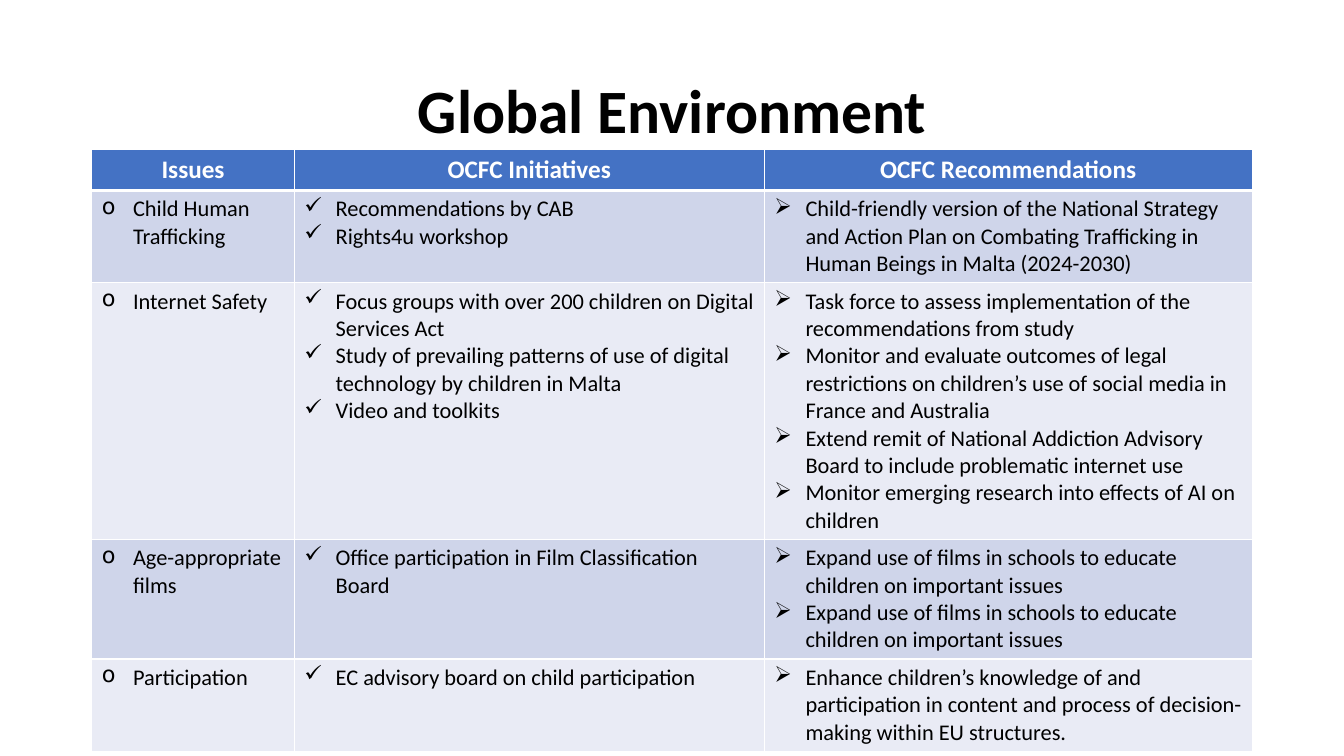
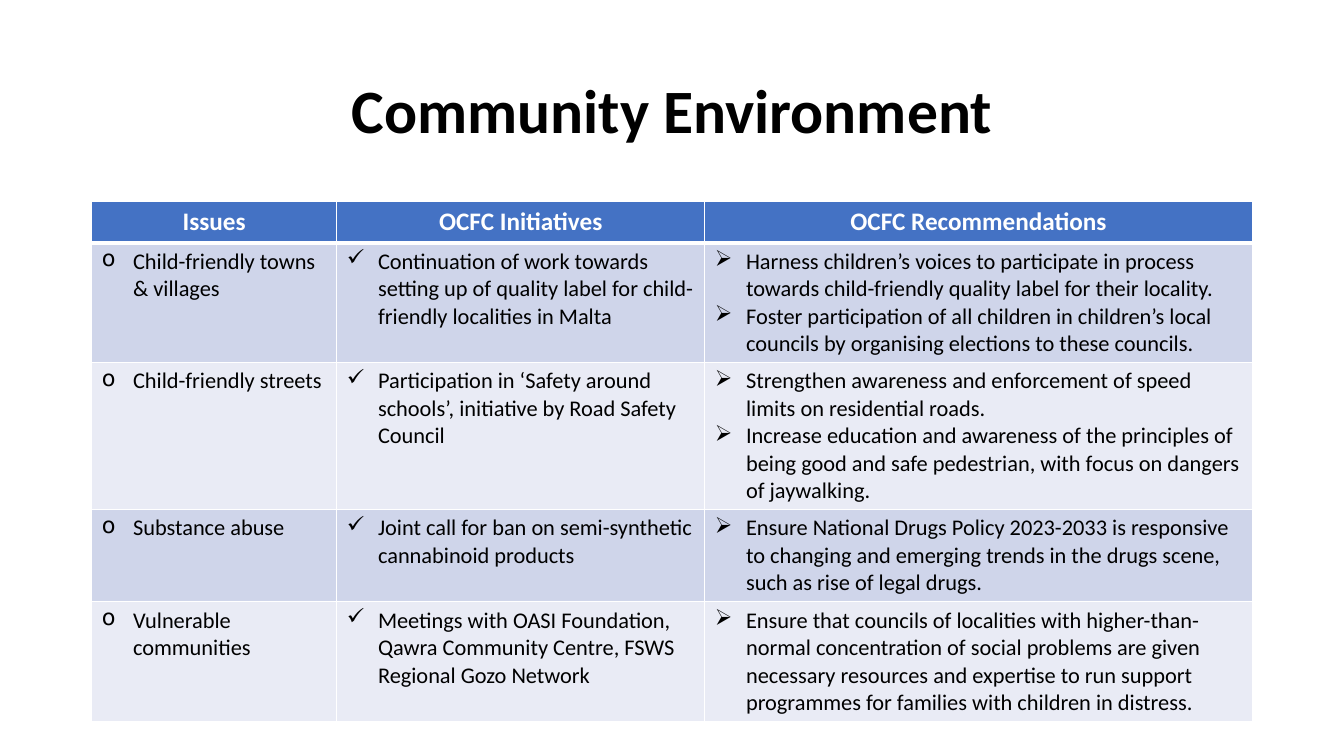
from pptx import Presentation
from pptx.dml.color import RGBColor
from pptx.enum.text import MSO_ANCHOR as Anchor, MSO_AUTO_SIZE as Fit, PP_ALIGN as Align
from pptx.oxml.ns import qn
from pptx.util import Inches, Pt
from lxml.etree import SubElement

FONT = "Calibri"
BLACK, WHITE, BLUE = "000000", "FFFFFF", "4472C4"
BANDS = ("CFD5EA", "E9EBF5")
HEADS = ("Issues", "OCFC Initiatives", "OCFC Recommendations")
MARKS = ("o", "✓", "➢")
INDENT = Inches(0.31)
ROW = 0.41
TITLE_BOX = (0.92, 0.4, 11.5, 1.45)

GLOBAL = [
    (["Child Human Trafficking"],
     ["Recommendations by CAB", "Rights4u workshop"],
     ["Child-friendly version of the National Strategy and Action Plan on "
      "Combating Trafficking in Human Beings in Malta (2024-2030)"]),
    (["Internet Safety"],
     ["Focus groups with over 200 children on Digital Services Act",
      "Study of prevailing patterns of use of digital technology by children in Malta",
      "Video and toolkits"],
     ["Task force to assess implementation of the recommendations from study",
      "Monitor and evaluate outcomes of legal restrictions on children’s use "
      "of social media in France and Australia",
      "Extend remit of National Addiction Advisory Board to include "
      "problematic internet use",
      "Monitor emerging research into effects of AI on children"]),
    (["Age-appropriate films"],
     ["Office participation in Film Classification Board"],
     ["Expand use of films in schools to educate children on important issues"] * 2),
    (["Participation"],
     ["EC advisory board on child participation"],
     ["Enhance children’s knowledge of and participation in content and "
      "process of decision-making within EU structures."]),
]

COMMUNITY = [
    (["Child-friendly towns & villages"],
     ["Continuation of work towards setting up of quality label for "
      "child-friendly localities in Malta"],
     ["Harness children’s voices to participate in process towards "
      "child-friendly quality label for their locality.",
      "Foster participation of all children in children’s local councils by "
      "organising elections to these councils."]),
    (["Child-friendly streets"],
     ["Participation in ‘Safety around schools’, initiative by Road Safety Council"],
     ["Strengthen awareness and enforcement of speed limits on residential roads.",
      "Increase education and awareness of the principles of being good and "
      "safe pedestrian, with focus on dangers of jaywalking."]),
    (["Substance abuse"],
     ["Joint call for ban on semi-synthetic cannabinoid products"],
     ["Ensure National Drugs Policy 2023-2033 is responsive to changing and "
      "emerging trends in the drugs scene, such as rise of legal drugs."]),
    (["Vulnerable communities"],
     ["Meetings with OASI Foundation, Qawra Community Centre, FSWS Regional Gozo Network"],
     ["Ensure that councils of localities with higher-than-normal concentration "
      "of social problems are given necessary resources and expertise to run "
      "support programmes for families with children in distress."]),
]


def rgb(code):
    return RGBColor.from_string(code)


def write(frame, lines, size=16, color=BLACK, bold=False, align=Align.LEFT,
          mark=None, spacing=None):
    for i, line in enumerate(lines):
        para = frame.add_paragraph() if i else frame.paragraphs[0]
        para.text = line
        para.alignment = align
        if spacing:
            para.line_spacing = spacing
        if mark:
            props = para._p.get_or_add_pPr()
            props.set("marL", str(INDENT))
            props.set("indent", str(-INDENT))
            SubElement(props, qn("a:buChar"), char=mark)
        font = para.font
        font.name, font.size, font.bold = FONT, Pt(size), bold
        font.color.rgb = rgb(color)


def edge(cell, top, bottom):
    """Draw white cell borders, with top and bottom widths in points."""
    props = cell._tc.get_or_add_tcPr()
    for side, width in (("L", 1), ("R", 1), ("T", top), ("B", bottom)):
        line = SubElement(props, qn("a:ln" + side), w=str(Pt(width)))
        fill = SubElement(line, qn("a:solidFill"))
        SubElement(fill, qn("a:srgbClr"), val=WHITE)


def paint(cell, color):
    cell.fill.solid()
    cell.fill.fore_color.rgb = rgb(color)


def add_title(slide, text, box):
    title = slide.shapes.title
    title.left, title.top, title.width, title.height = map(Inches, box)
    frame = title.text_frame
    frame.vertical_anchor = Anchor.MIDDLE
    frame.auto_size = Fit.NONE
    write(frame, [text], size=44, bold=True, align=Align.CENTER, spacing=0.9)


def add_grid(slide, rows, left, top, widths):
    count = len(rows) + 1
    grid = slide.shapes.add_table(count, len(widths), Inches(left), Inches(top),
                                  Inches(sum(widths)), Inches(ROW * count)).table
    for col, width in zip(grid.columns, widths):
        col.width = Inches(width)
    for c, head in enumerate(HEADS):
        cell = grid.cell(0, c)
        edge(cell, 1, 3)
        paint(cell, BLUE)
        write(cell.text_frame, [head], size=18, color=WHITE, bold=True,
              align=Align.CENTER)
    for r, row in enumerate(rows, 1):
        for c, lines in enumerate(row):
            cell = grid.cell(r, c)
            edge(cell, 3 if r == 1 else 1, 1)
            paint(cell, BANDS[(r - 1) % 2])
            write(cell.text_frame, lines, mark=MARKS[c])


def add_topic(deck, title, rows, top, widths):
    slide = deck.slides.add_slide(deck.slide_layouts.get_by_name("Title Only"))
    add_title(slide, title, TITLE_BOX)
    add_grid(slide, rows, 0.91, top, widths)


def main():
    deck = Presentation()
    deck.slide_width, deck.slide_height = Inches(13.33), Inches(7.5)
    add_topic(deck, "Global Environment", GLOBAL, 1.48, (2.01, 4.66, 4.84))
    add_topic(deck, "Community Environment", COMMUNITY, 2, (2.43, 3.65, 5.43))
    deck.save("out.pptx")


if __name__ == "__main__":
    main()
